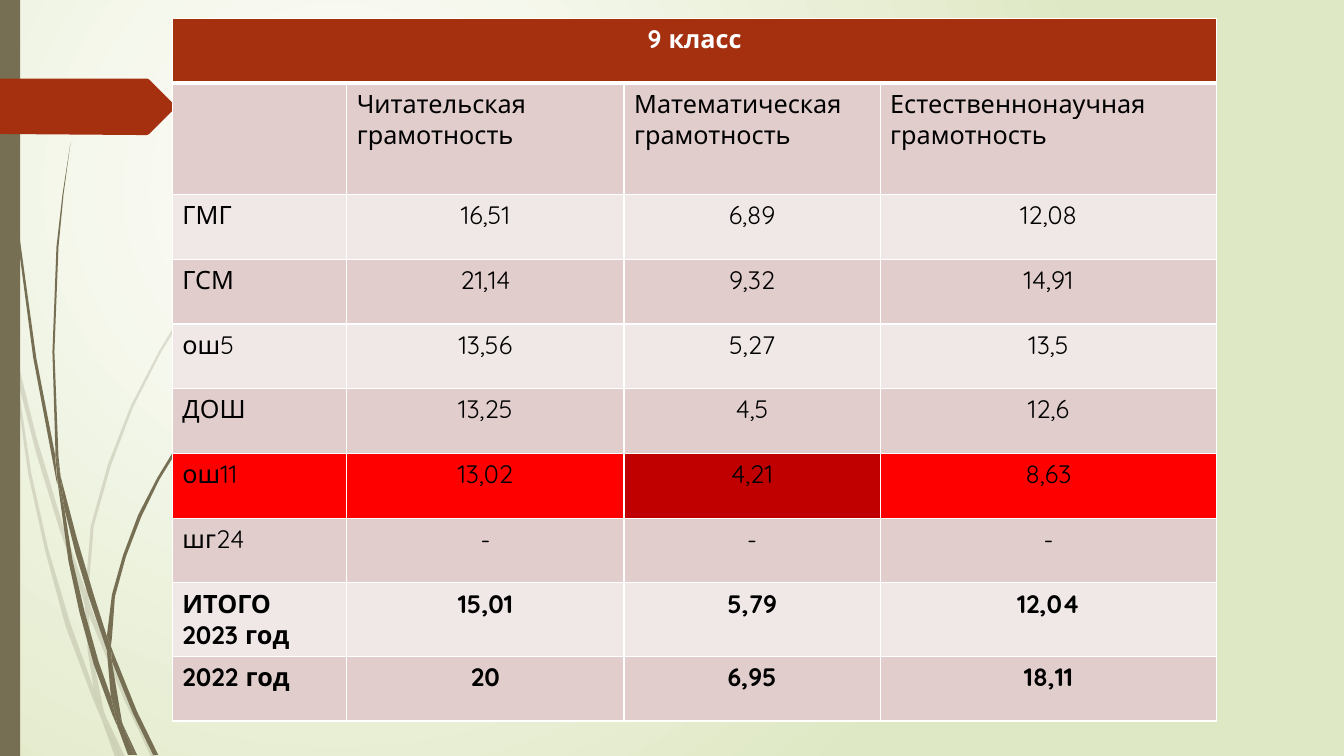
from dataclasses import dataclass

from lxml.etree import SubElement
from pptx import Presentation
from pptx.dml.color import RGBColor
from pptx.enum.shapes import MSO_SHAPE
from pptx.enum.text import PP_ALIGN
from pptx.oxml.ns import qn
from pptx.shapes.autoshape import Shape
from pptx.slide import Slide
from pptx.table import _Cell
from pptx.util import Inches, Pt

# The slide is a fine grid of 1333 columns by 750 rows.
COLUMNS, ROWS = 1333, 750
UNIT = Inches(7.5) // ROWS


@dataclass(frozen=True)
class Theme:
    font: str = "Quicksand"
    size: int = 18
    stem: str = "766F54"
    accent: str = "A53010"
    white: str = "FFFFFF"
    black: str = "000000"
    meadow: str = "DFE8C4"
    dark_band: str = "E1CDCC"
    light_band: str = "F0E8E7"
    alert: str = "FF0000"
    deep_alert: str = "C00000"
    pale_opacity: int = 20


@dataclass(frozen=True)
class Outline:
    points: tuple[tuple[int, int], ...]
    color: str
    opacity: int = 100


@dataclass(frozen=True)
class ResultRow:
    cells: tuple[str, ...]
    height: float = 64.2
    bold: bool = False


THEME = Theme()

PALE_GRASS = (
    ((11, 350), (9, 322), (0, 282), (0, 299), (10, 344)),
    ((58, 522), (84, 599), (85, 586), (62, 520), (36, 433), (14, 345), (17, 376), (36, 450)),
    ((92, 607), (88, 596), (88, 610), (123, 694), (150, 751), (155, 751), (127, 692)),
    ((119, 751), (124, 751), (105, 711)),
    ((93, 683), (70, 619), (48, 545), (31, 469), (17, 376), (11, 350), (28, 470),
     (45, 547), (65, 621), (92, 693), (101, 714), (99, 707)),
    ((84, 599), (87, 646), (93, 683), (96, 692), (105, 711), (103, 706), (91, 646),
     (88, 610), (88, 608)),
    ((88, 584), (93, 522), (110, 462), (132, 404), (160, 349), (193, 296), (229, 245),
     (268, 198), (290, 175), (312, 154), (312, 153), (289, 175), (268, 197), (228, 244),
     (191, 294), (158, 348), (130, 402), (107, 461), (90, 522), (85, 584), (85, 586),
     (88, 596)),
    ((101, 714), (114, 751), (119, 751)),
    ((88, 608), (88, 610), (88, 596), (85, 586), (84, 599)),
    ((96, 692), (93, 683), (99, 707), (101, 714), (119, 751), (105, 711)),
)

DARK_GRASS = (
    ((7, 110), (17, 233), (33, 355), (56, 477), (57, 481), (55, 457), (55, 453), (36, 355),
     (19, 232), (8, 109), (5, 48), (4, 0), (3, 0), (4, 48)),
    ((88, 592), (106, 645), (106, 633), (106, 631), (93, 590), (76, 533), (60, 472),
     (64, 505), (75, 549)),
    ((113, 649), (110, 641), (111, 656), (132, 708), (152, 749), (157, 749), (136, 706)),
    ((110, 691), (98, 657), (84, 607), (72, 556), (64, 505), (57, 477), (68, 557),
     (79, 608), (93, 659), (111, 708), (117, 722), (116, 717)),
    ((60, 472), (58, 453), (54, 349), (58, 245), (63, 193), (70, 141), (62, 193),
     (56, 245), (52, 349), (55, 449)),
    ((133, 749), (136, 749), (122, 719)),
    ((57, 477), (64, 505), (60, 472), (55, 449), (55, 453)),
    ((111, 633), (114, 592), (125, 552), (140, 513), (158, 476), (180, 440), (205, 406),
     (231, 374), (245, 359), (261, 344), (260, 344), (245, 358), (231, 373), (204, 405),
     (178, 438), (156, 474), (137, 511), (122, 551), (111, 590), (106, 631), (110, 641)),
    ((117, 722), (127, 749), (131, 749)),
    ((106, 645), (110, 691), (116, 706), (122, 719), (121, 716), (111, 656), (109, 651)),
    ((106, 645), (109, 651), (111, 656), (110, 641), (106, 631), (106, 633)),
    ((116, 706), (110, 691), (116, 717), (117, 722), (130, 749), (133, 749), (122, 719)),
)

ARROW_TAG = ((173, 108), (148, 133), (146, 134), (136, 134), (0, 133), (0, 78), (136, 78),
             (146, 78), (148, 79), (173, 104), (174, 106))

COLUMN_WIDTHS = (173, 275, 254, 334)
RESULTS = (
    ResultRow(("9 класс", "", "", ""), bold=True),
    ResultRow(("", "Читательская грамотность", "Математическая грамотность",
               "Естественнонаучная грамотность"), height=111),
    ResultRow(("ГМГ", "16,51", "6,89", "12,08")),
    ResultRow(("ГСМ", "21,14", "9,32", "14,91")),
    ResultRow(("ош5", "13,56", "5,27", "13,5")),
    ResultRow(("ДОШ", "13,25", "4,5", "12,6")),
    ResultRow(("ош11", "13,02", "4,21", "8,63")),
    ResultRow(("шг24", "-", "-", "-")),
    ResultRow(("ИТОГО\n2023 год", "15,01", "5,79", "12,04"), height=73, bold=True),
    ResultRow(("2022 год", "20", "6,95", "18,11"), bold=True),
)
ALERT_ROW, DEEP_ALERT_COLUMN = 6, 2


def grid(cells: float) -> int:
    """Length of a number of grid cells."""
    return round(cells * UNIT)


def paint(shape: Shape, color: str, opacity: int = 100) -> None:
    shape.shadow.inherit = False
    shape.line.fill.background()
    shape.fill.solid()
    shape.fill.fore_color.rgb = RGBColor.from_string(color)
    if opacity < 100:
        color_element = shape.element.spPr.find(f"{qn('a:solidFill')}/{qn('a:srgbClr')}")
        SubElement(color_element, qn("a:alpha"), val=str(opacity * 1000))


def draw_outline(slide: Slide, outline: Outline) -> None:
    start, *others = outline.points
    builder = slide.shapes.build_freeform(*start, scale=UNIT)
    builder.add_line_segments(others, close=True)
    paint(builder.convert_to_shape(), outline.color, outline.opacity)


def draw_background(slide: Slide) -> None:
    fill = slide.background.fill
    fill.gradient()
    for stop, position, color in zip(fill.gradient_stops, (0, 1), (THEME.white, THEME.meadow)):
        stop.position = position
        stop.color.rgb = RGBColor.from_string(color)
    gradient = slide.element.find(f".//{qn('a:gradFill')}")
    gradient.remove(gradient.find(qn("a:lin")))
    circle = SubElement(gradient, qn("a:path"), path="circle")
    SubElement(circle, qn("a:fillToRect"), l="50000", t="50000", r="100000", b="100000")


def draw_borders(cell: _Cell, bottom: int) -> None:
    properties = cell._tc.get_or_add_tcPr()
    for side, width in zip("LRTB", (1, 1, 1, bottom)):
        line = SubElement(properties, qn(f"a:ln{side}"), w=str(Pt(width)))
        SubElement(SubElement(line, qn("a:solidFill")), qn("a:srgbClr"), val=THEME.white)


def cell_color(row: int, column: int) -> str:
    if row == 0:
        return THEME.accent
    if row == ALERT_ROW:
        return THEME.deep_alert if column == DEEP_ALERT_COLUMN else THEME.alert
    return THEME.dark_band if row % 2 else THEME.light_band


def draw_results(slide: Slide) -> None:
    frame = slide.shapes.add_table(
        len(RESULTS), len(COLUMN_WIDTHS), grid(171), grid(18),
        grid(sum(COLUMN_WIDTHS)), grid(sum(result.height for result in RESULTS)))
    table = frame.table
    for column, width in zip(table.columns, COLUMN_WIDTHS):
        column.width = grid(width)
    for row, result in enumerate(RESULTS):
        table.rows[row].height = grid(result.height)
        for column, text in enumerate(result.cells):
            cell = table.cell(row, column)
            cell.text = text
            draw_borders(cell, bottom=1 if row else 3)
            cell.fill.solid()
            cell.fill.fore_color.rgb = RGBColor.from_string(cell_color(row, column))
            centred = row == 0 or (row > 1 and column > 0)
            for paragraph in cell.text_frame.paragraphs:
                paragraph.alignment = PP_ALIGN.CENTER if centred else PP_ALIGN.LEFT
                font = paragraph.font
                font.name, font.size, font.bold = THEME.font, Pt(THEME.size), result.bold
                font.color.rgb = RGBColor.from_string(THEME.black if row else THEME.white)
    table.cell(0, 0).merge(table.cell(0, len(COLUMN_WIDTHS) - 1))


def main() -> None:
    presentation = Presentation()
    presentation.slide_width, presentation.slide_height = grid(COLUMNS), grid(ROWS)
    slide = presentation.slides.add_slide(presentation.slide_layouts[6])
    draw_background(slide)
    for blade in PALE_GRASS:
        draw_outline(slide, Outline(blade, THEME.stem, THEME.pale_opacity))
    for blade in DARK_GRASS:
        draw_outline(slide, Outline(blade, THEME.stem))
    paint(slide.shapes.add_shape(MSO_SHAPE.RECTANGLE, 0, 0, grid(20), grid(ROWS)), THEME.stem)
    draw_outline(slide, Outline(ARROW_TAG, THEME.accent))
    draw_results(slide)
    presentation.save("out.pptx")


if __name__ == "__main__":
    main()
